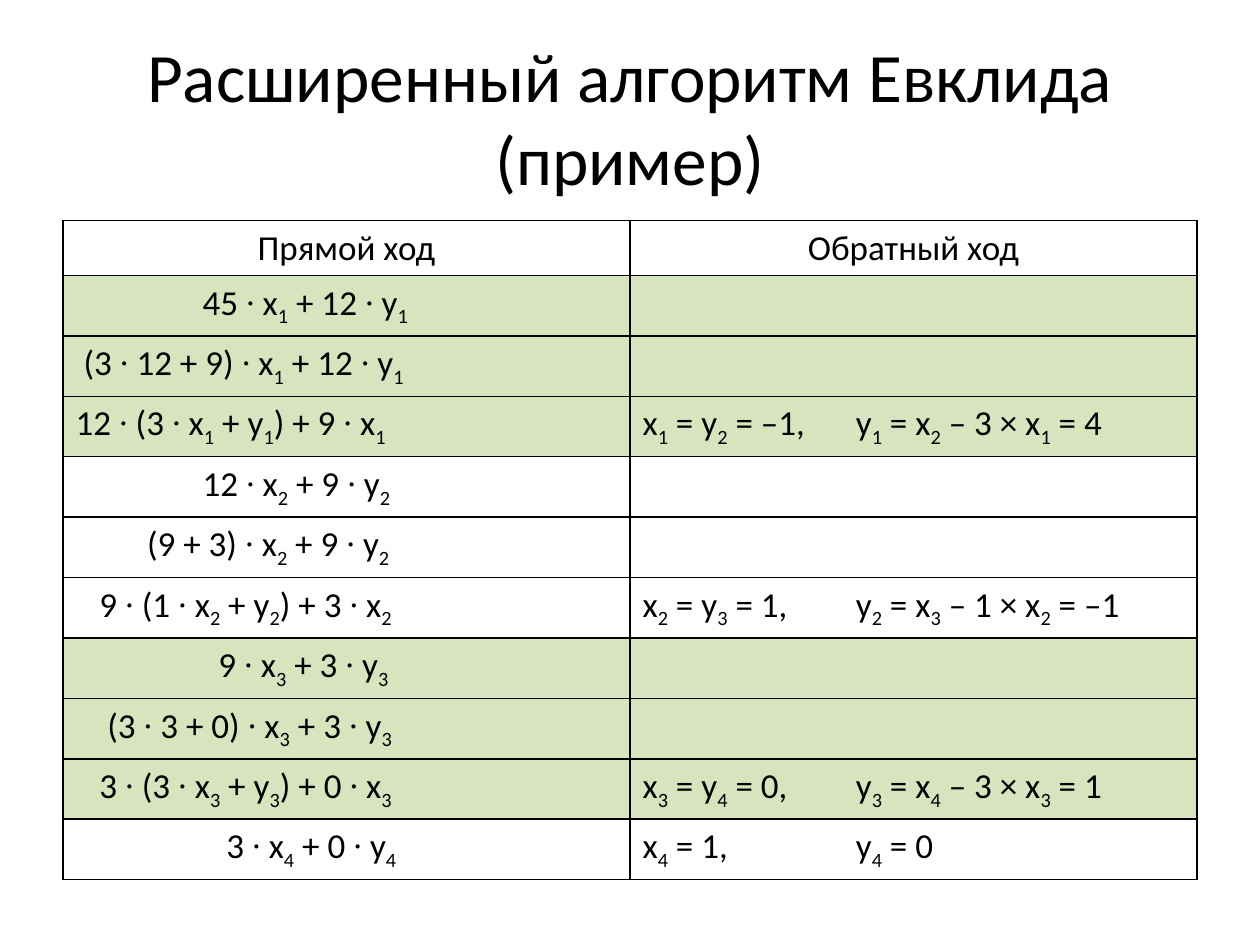
from dataclasses import dataclass
from itertools import groupby

from lxml.etree import SubElement
from pptx import Presentation
from pptx.dml.color import RGBColor
from pptx.enum.text import MSO_ANCHOR, PP_ALIGN
from pptx.oxml.ns import qn
from pptx.util import Cm, Pt


@dataclass(frozen=True)
class Theme:
    font: str = "Calibri"
    dot_font: str = "Times New Roman"
    title_size: float = 39.6
    body_size: float = 20
    ink: str = "000000"
    band: str = "D7E4BD"
    line_width: float = 1


THEME = Theme()
SUBSCRIPTS = str.maketrans("₁₂₃₄", "1234")
INDENT_STEP = 0.16  # cm
TAB_STOP = 4.3  # cm

TITLE = ("Расширенный алгоритм Евклида", "(пример)")
HEADER = ("Прямой ход", "Обратный ход")

# Each step of the algorithm: banded or not, then (indent, forward, backward)
STEPS = [
    (True, [(16, "45 ∙ x₁ + 12 ∙ y₁", ""),
            (1, "(3 ∙ 12 + 9) ∙ x₁ + 12 ∙ y₁", ""),
            (0, "12 ∙ (3 ∙ x₁ + y₁) + 9 ∙ x₁", "x₁ = y₂ = –1,\ty₁ = x₂ – 3 × x₁ = 4")]),
    (False, [(16, "12 ∙ x₂ + 9 ∙ y₂", ""),
             (9, "(9 + 3) ∙ x₂ + 9 ∙ y₂", ""),
             (3, "9 ∙ (1 ∙ x₂ + y₂) + 3 ∙ x₂", "x₂ = y₃ = 1,\ty₂ = x₃ – 1 × x₂ = –1")]),
    (True, [(18, "9 ∙ x₃ + 3 ∙ y₃", ""),
            (4, "(3 ∙ 3 + 0) ∙ x₃ + 3 ∙ y₃", ""),
            (3, "3 ∙ (3 ∙ x₃ + y₃) + 0 ∙ x₃", "x₃ = y₄ = 0,\ty₃ = x₄ – 3 × x₃ = 1")]),
    (False, [(19, "3 ∙ x₄ + 0 ∙ y₄", "x₄ = 1,\ty₄ = 0")]),
]


def add_run(p, text, size, font=THEME.font):
    r = p.add_run()
    r.text = text
    r.font.name, r.font.size, r.font.bold = font, Pt(size), False
    r.font.color.rgb = RGBColor.from_string(THEME.ink)
    return r


def char_kind(char):
    if char == "∙":
        return "dot"
    return "subscript" if char in "₁₂₃₄" else "plain"


def add_formula(p, formula):
    for kind, chars in groupby(formula, char_kind):
        text = "".join(chars).translate(SUBSCRIPTS)
        font = THEME.dot_font if kind == "dot" else THEME.font
        r = add_run(p, text, THEME.body_size, font)
        if kind == "subscript":
            r.font._element.set("baseline", "-25000")


def set_indent(p, steps):
    pPr = p._p.get_or_add_pPr()
    pPr.set("marL", str(Cm(steps * INDENT_STEP)))
    pPr.set("indent", "0")


def set_tab_stop(p):
    tabs = SubElement(p._p.get_or_add_pPr(), qn("a:tabLst"))
    SubElement(tabs, qn("a:tab"), pos=str(Cm(TAB_STOP)), algn="l")


def style_cell(cell, banded):
    tcPr = cell._tc.get_or_add_tcPr()
    for side in ("lnL", "lnR", "lnT", "lnB"):
        ln = SubElement(tcPr, qn(f"a:{side}"), w=str(Pt(THEME.line_width)))
        fill = SubElement(ln, qn("a:solidFill"))
        SubElement(fill, qn("a:srgbClr"), val=THEME.ink)
    if banded:
        cell.fill.solid()
        cell.fill.fore_color.rgb = RGBColor.from_string(THEME.band)
    else:
        cell.fill.background()


def add_title(s):
    tf = s.shapes.add_textbox(Cm(1.27), Cm(0.76), Cm(22.86), Cm(3.18)).text_frame
    tf.word_wrap = True
    tf.vertical_anchor = MSO_ANCHOR.MIDDLE
    p = tf.paragraphs[0]
    p.alignment = PP_ALIGN.CENTER
    first, second = TITLE
    add_run(p, first, THEME.title_size)
    p.add_line_break()
    add_run(p, second, THEME.title_size)


def add_steps_table(s):
    rows = [(banded, *row) for banded, step in STEPS for row in step]
    count = len(rows) + 1
    table = s.shapes.add_table(count, 2, Cm(1.27), Cm(4.45),
                               Cm(22.86), Cm(1.1 * count)).table
    table.first_row = table.horz_banding = False

    # Header
    for cell, text in zip(table.rows[0].cells, HEADER):
        style_cell(cell, False)
        p = cell.text_frame.paragraphs[0]
        p.alignment = PP_ALIGN.CENTER
        add_run(p, text, THEME.body_size)

    # Forward and backward pass
    for i, (banded, indent, forward, backward) in enumerate(rows, start=1):
        left, right = table.rows[i].cells
        for cell, formula in ((left, forward), (right, backward)):
            style_cell(cell, banded)
            add_formula(cell.text_frame.paragraphs[0], formula)
        set_indent(left.text_frame.paragraphs[0], indent)
        if backward:
            set_tab_stop(right.text_frame.paragraphs[0])


def main():
    prs = Presentation()
    prs.slide_width, prs.slide_height = Cm(25.4), Cm(19.05)
    s = prs.slides.add_slide(prs.slide_layouts[6])
    add_title(s)
    add_steps_table(s)
    prs.save("out.pptx")


if __name__ == "__main__":
    main()
